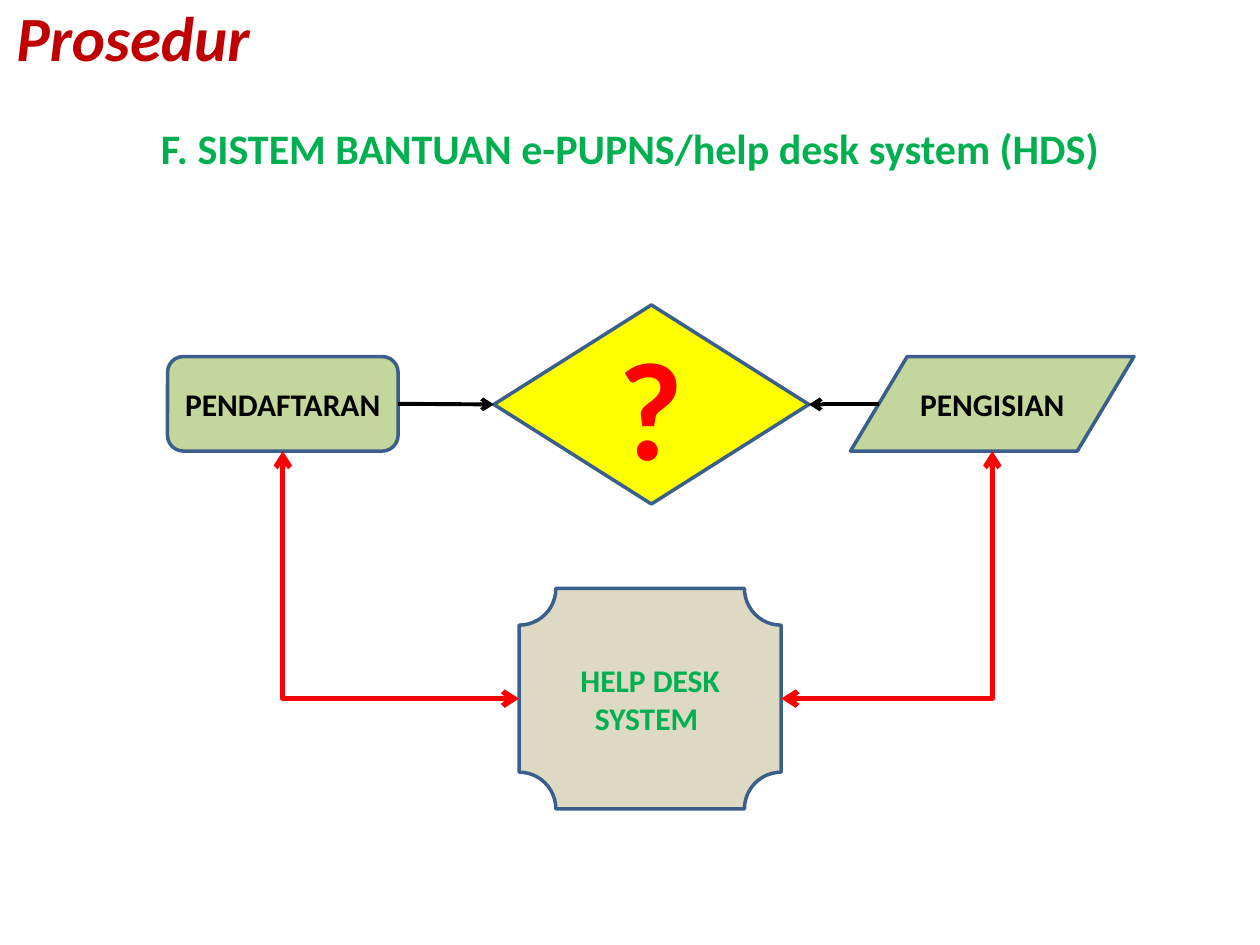
from dataclasses import dataclass

from lxml import etree
from pptx import Presentation
from pptx.dml.color import RGBColor
from pptx.enum.shapes import MSO_CONNECTOR, MSO_SHAPE
from pptx.enum.text import MSO_ANCHOR, PP_ALIGN
from pptx.oxml.ns import qn
from pptx.shapes.autoshape import Shape
from pptx.shapes.connector import Connector
from pptx.slide import Slide
from pptx.util import Inches, Pt

STRAIGHT, ELBOW = MSO_CONNECTOR.STRAIGHT, MSO_CONNECTOR.ELBOW
ROUNDED = MSO_SHAPE.ROUNDED_RECTANGLE
PARALLELOGRAM = MSO_SHAPE.FLOWCHART_DATA
DIAMOND, PLAQUE = MSO_SHAPE.DIAMOND, MSO_SHAPE.PLAQUE
MIDDLE, TOP = MSO_ANCHOR.MIDDLE, MSO_ANCHOR.TOP
CENTER, RIGHT = PP_ALIGN.CENTER, PP_ALIGN.RIGHT
LEFT_SIDE, RIGHT_SIDE = 1, 3

FONT = "Calibri"
BLACK, RED, GREEN, DARK_RED = "000000", "FF0000", "00B050", "C00000"
OUTLINE, SAGE, YELLOW, SAND = "3A5F8C", "C3D69B", "FFFF00", "DDD9C3"


@dataclass
class Label:
    text: str
    size: float
    color: str
    align: PP_ALIGN = CENTER
    anchor: MSO_ANCHOR = MIDDLE
    italic: bool = False


@dataclass
class Box:
    left: float
    top: float
    width: float
    height: float

    @property
    def center_x(self) -> float:
        return self.left + self.width / 2

    @property
    def center_y(self) -> float:
        return self.top + self.height / 2

    @property
    def right(self) -> float:
        return self.left + self.width

    @property
    def bottom(self) -> float:
        return self.top + self.height

    def lengths(self) -> list[int]:
        return [Inches(value) for value in (self.left, self.top, self.width, self.height)]


@dataclass
class Node:
    kind: MSO_SHAPE
    box: Box
    fill: str
    label: Label
    side_margin: float = 0.1


def rgb(color: str) -> RGBColor:
    return RGBColor.from_string(color)


def write_label(shape: Shape, label: Label) -> None:
    frame = shape.text_frame
    frame.word_wrap = True
    frame.vertical_anchor = label.anchor
    paragraph = frame.paragraphs[0]
    paragraph.text = label.text
    paragraph.alignment = label.align
    font = paragraph.font
    font.name = FONT
    font.size = Pt(label.size)
    font.bold = True
    font.italic = label.italic
    font.color.rgb = rgb(label.color)


def add_text(slide: Slide, box: Box, label: Label) -> None:
    write_label(slide.shapes.add_textbox(*box.lengths()), label)


def add_node(slide: Slide, node: Node) -> Shape:
    shape = slide.shapes.add_shape(node.kind, *node.box.lengths())
    shape.shadow.inherit = False
    shape.fill.solid()
    shape.fill.fore_color.rgb = rgb(node.fill)
    shape.line.color.rgb = rgb(OUTLINE)
    shape.line.width = Pt(2)
    write_label(shape, node.label)
    shape.text_frame.margin_left = Inches(node.side_margin)
    shape.text_frame.margin_right = Inches(node.side_margin)
    return shape


def add_arrow(slide: Slide, kind: MSO_CONNECTOR, start: tuple[float, float],
              end: tuple[float, float], color: str, width: float,
              ends: tuple[str, ...]) -> Connector:
    points = [Inches(value) for value in (*start, *end)]
    connector = slide.shapes.add_connector(kind, *points)
    connector.line.color.rgb = rgb(color)
    connector.line.width = Pt(width)
    line = connector.line._get_or_add_ln()
    for name in ends:
        etree.SubElement(line, qn(f"a:{name}"), type="arrow")
    properties = connector._element.spPr
    etree.SubElement(properties, qn("a:effectLst"))
    if kind == ELBOW:
        properties.find(qn("a:prstGeom")).set("prst", "bentConnector2")
    return connector


def main() -> None:
    presentation = Presentation()
    presentation.slide_width = Inches(10)
    presentation.slide_height = Inches(7.5)
    slide = presentation.slides.add_slide(presentation.slide_layouts[6])

    add_text(slide, Box(0, 0, 2.08, 0.58),
             Label("Prosedur", 36, DARK_RED, align=RIGHT, italic=True))
    add_text(slide, Box(0, 0.92, 10, 0.58),
             Label("F. SISTEM BANTUAN e-PUPNS/help desk system (HDS)", 24, GREEN, anchor=TOP))

    registration = Box(1.33, 2.83, 1.83, 0.75)
    filling = Box(6.75, 2.83, 2.25, 0.75)
    question = Box(3.92, 2.42, 2.5, 1.58)
    help_desk = Box(4.12, 4.67, 2.08, 1.75)

    registration_shape = add_node(
        slide, Node(ROUNDED, registration, SAGE, Label("PENDAFTARAN", 18, BLACK)))
    add_node(slide, Node(PARALLELOGRAM, filling, SAGE, Label("PENGISIAN", 18, BLACK), 0))
    question_shape = add_node(slide, Node(DIAMOND, question, YELLOW, Label("?", 80, RED)))
    add_node(slide, Node(PLAQUE, help_desk, SAND, Label("HELP DESK SYSTEM ", 18, GREEN)))

    middle = question.center_y
    from_registration = add_arrow(slide, STRAIGHT, (registration.right, middle),
                                  (question.left, middle), BLACK, 2.25, ("tailEnd",))
    from_registration.begin_connect(registration_shape, RIGHT_SIDE)
    from_registration.end_connect(question_shape, LEFT_SIDE)
    slant = filling.width / 10
    from_filling = add_arrow(slide, STRAIGHT, (filling.left + slant, middle),
                             (question.right, middle), BLACK, 2.25, ("tailEnd",))
    from_filling.end_connect(question_shape, RIGHT_SIDE)

    for side, step in ((help_desk.left, registration), (help_desk.right, filling)):
        add_arrow(slide, ELBOW, (side, help_desk.center_y), (step.center_x, step.bottom),
                  RED, 3, ("headEnd", "tailEnd"))

    presentation.save("out.pptx")


if __name__ == "__main__":
    main()
